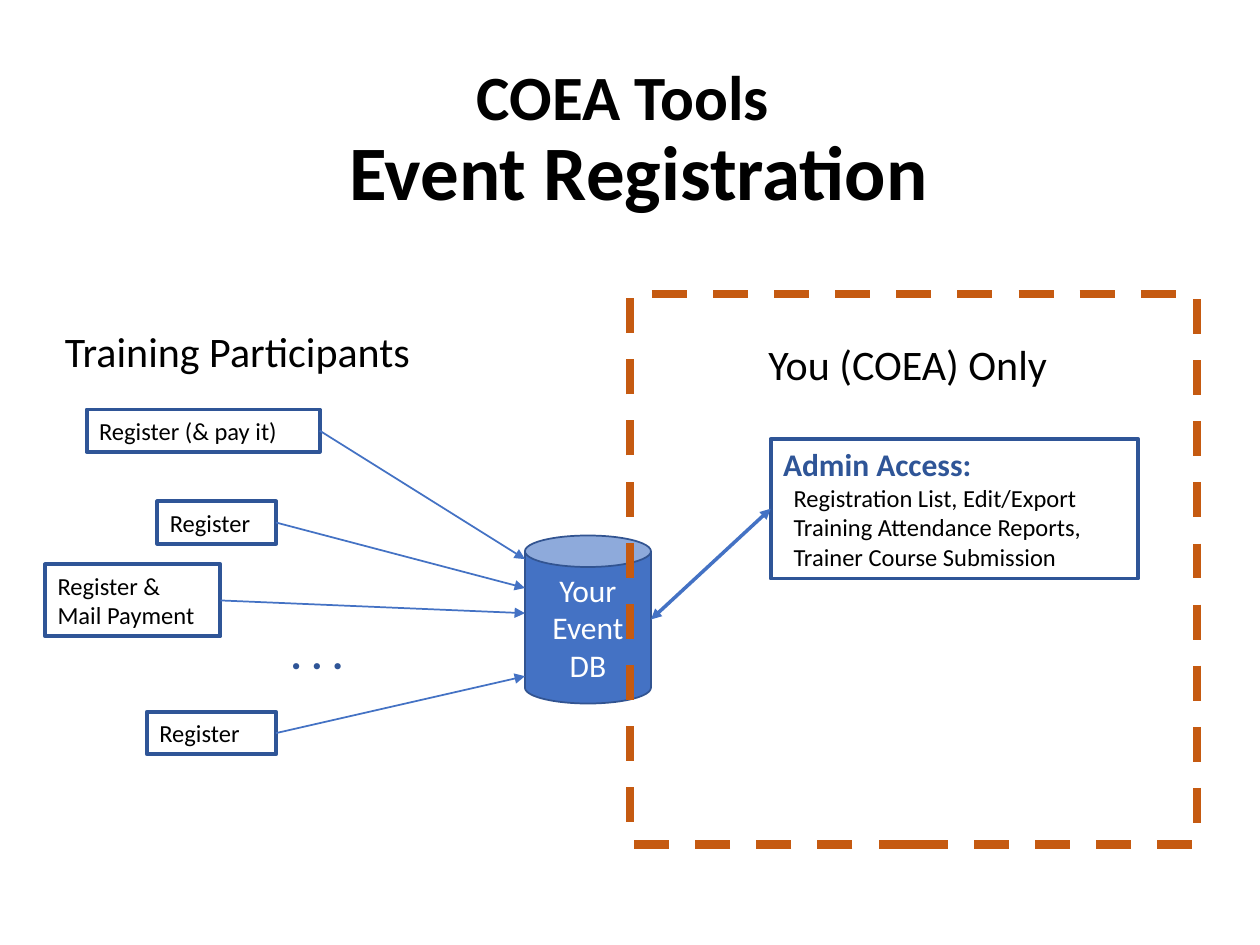
import pptx
import pptx.util
import pptx.dml.color
import pptx.enum.dml
import pptx.enum.shapes
import pptx.enum.text
import pptx.oxml.ns
import lxml.etree

RGB = pptx.dml.color.RGBColor
BLACK = RGB(0x00, 0x00, 0x00)
WHITE = RGB(0xFF, 0xFF, 0xFF)
BLUE = RGB(0x44, 0x72, 0xC4)
CAN_EDGE = RGB(0x32, 0x54, 0x91)
NAVY = RGB(0x2F, 0x55, 0x97)
ORANGE = RGB(0xC5, 0x5A, 0x11)

Pt = pptx.util.Pt
SHAPE = pptx.enum.shapes.MSO_SHAPE
ALIGN = pptx.enum.text.PP_ALIGN
ANCHOR = pptx.enum.text.MSO_ANCHOR
FIT = pptx.enum.text.MSO_AUTO_SIZE
qn = pptx.oxml.ns.qn

prs = pptx.Presentation()
prs.slide_width = pptx.util.Inches(10)
prs.slide_height = pptx.util.Inches(7.5)
s = prs.slides.add_slide(prs.slide_layouts[6])
COL = prs.slide_width / 120
ROW = prs.slide_height / 90


def add_box(kind, col, row, cols, rows, line=None, width=0, fill=None):
    """Place a text box (kind None) or a preset shape on the grid."""
    at = [int(v) for v in (col * COL, row * ROW, cols * COL, rows * ROW)]
    if kind is None:
        sp = s.shapes.add_textbox(*at)
    else:
        sp = s.shapes.add_shape(kind, *at)
        sp.shadow.inherit = False
        sp.line.color.rgb = line
        sp.line.width = Pt(width)
        if fill is None:
            sp.fill.background()
        else:
            sp.fill.solid()
            sp.fill.fore_color.rgb = fill
    sp.text_frame.word_wrap = True
    sp.text_frame.vertical_anchor = ANCHOR.TOP
    return sp


def add_run(p, text, size, color=BLACK, bold=False, align=ALIGN.LEFT):
    p.alignment = align
    r = p.add_run()
    r.text = text
    r.font.name = "Calibri"
    r.font.size = Pt(size)
    r.font.bold = bold
    r.font.color.rgb = color


# Title and column headings
tf = add_box(None, 8.3, 4.8, 103.4, 17.4).text_frame
tf.vertical_anchor = ANCHOR.MIDDLE
p = tf.paragraphs[0]
p.line_spacing = 0.9
add_run(p, "COEA Tools ", 36, bold=True, align=ALIGN.CENTER)
p.add_line_break()
add_run(p, " Event Registration", 44, bold=True, align=ALIGN.CENTER)

for text, col, row, cols, rows in [
    ("Training Participants", 5, 31, 45, 49.4),
    ("You (COEA) Only", 72, 32.2, 35, 50.8),
]:
    p = add_box(None, col, row, cols, rows).text_frame.paragraphs[0]
    p.line_spacing = 0.9
    add_run(p, text, 24)

# Database
can = add_box(SHAPE.CAN, 50, 51, 12, 16, CAN_EDGE, 1, BLUE)
can.text_frame.vertical_anchor = ANCHOR.MIDDLE
p = can.text_frame.paragraphs[0]
add_run(p, "Your", 18, WHITE, align=ALIGN.CENTER)
p.add_line_break()
add_run(p, "Event DB", 18, WHITE, align=ALIGN.CENTER)

# Participant boxes, each with the row where its arrow meets the database
links = []
for text, col, row, cols, rows, target in [
    ("Register (& pay it)", 8.25, 39, 22.2, 4.04, 53.25),
    ("Register", 15, 47.75, 11.3, 4.04, 56),
    ("Register & Mail Payment", 4.3, 53.75, 16.7, 6.87, 58.4),
    ("Register", 14, 67.8, 12.3, 4.04, 64.4),
]:
    sp = add_box(SHAPE.RECTANGLE, col, row, cols, rows, NAVY, 2.25)
    sp.text_frame.auto_size = FIT.SHAPE_TO_FIT_TEXT
    add_run(sp.text_frame.paragraphs[0], text, 14)
    links.append((sp, 3, 50, target, BLUE, 1, ["tailEnd"]))

dots = add_box(None, 26.5, 59.2, 9, 6)
add_run(dots.text_frame.paragraphs[0], ". . .", 24, NAVY, bold=True)

# Admin box
admin = add_box(SHAPE.RECTANGLE, 73.4, 41.8, 35, 13.3, NAVY, 2.25)
tf = admin.text_frame
tf.auto_size = FIT.SHAPE_TO_FIT_TEXT
add_run(tf.paragraphs[0], "Admin Access:", 18, NAVY, bold=True)
for text in [
    "Registration List, Edit/Export",
    "Training Attendance Reports,",
    "Trainer Course Submission",
]:
    p = tf.add_paragraph()
    p._p.get_or_add_pPr().set("marL", str(int(COL)))
    add_run(p, text, 14)
links.append((admin, 1, 62, 59, BLUE, 2, ["headEnd", "tailEnd"]))

# Arrows to the database
for sp, side, col, row, color, width, ends in links:
    x, y = int(col * COL), int(row * ROW)
    line = s.shapes.add_connector(
        pptx.enum.shapes.MSO_CONNECTOR.STRAIGHT, x, y, x, y)
    line.begin_connect(sp, side)
    line.line.color.rgb = color
    line.line.width = Pt(width)
    ln = line.line._get_or_add_ln()
    for end in ends:
        lxml.etree.SubElement(ln, qn("a:" + end), type="triangle")
    lxml.etree.SubElement(line._element.spPr, qn("a:effectLst"))

# Dashed border of the admin-only area
area = add_box(SHAPE.RECTANGLE, 60, 28, 54, 52.4, ORANGE, 5)
area.line.dash_style = pptx.enum.dml.MSO_LINE.DASH

prs.save("out.pptx")
